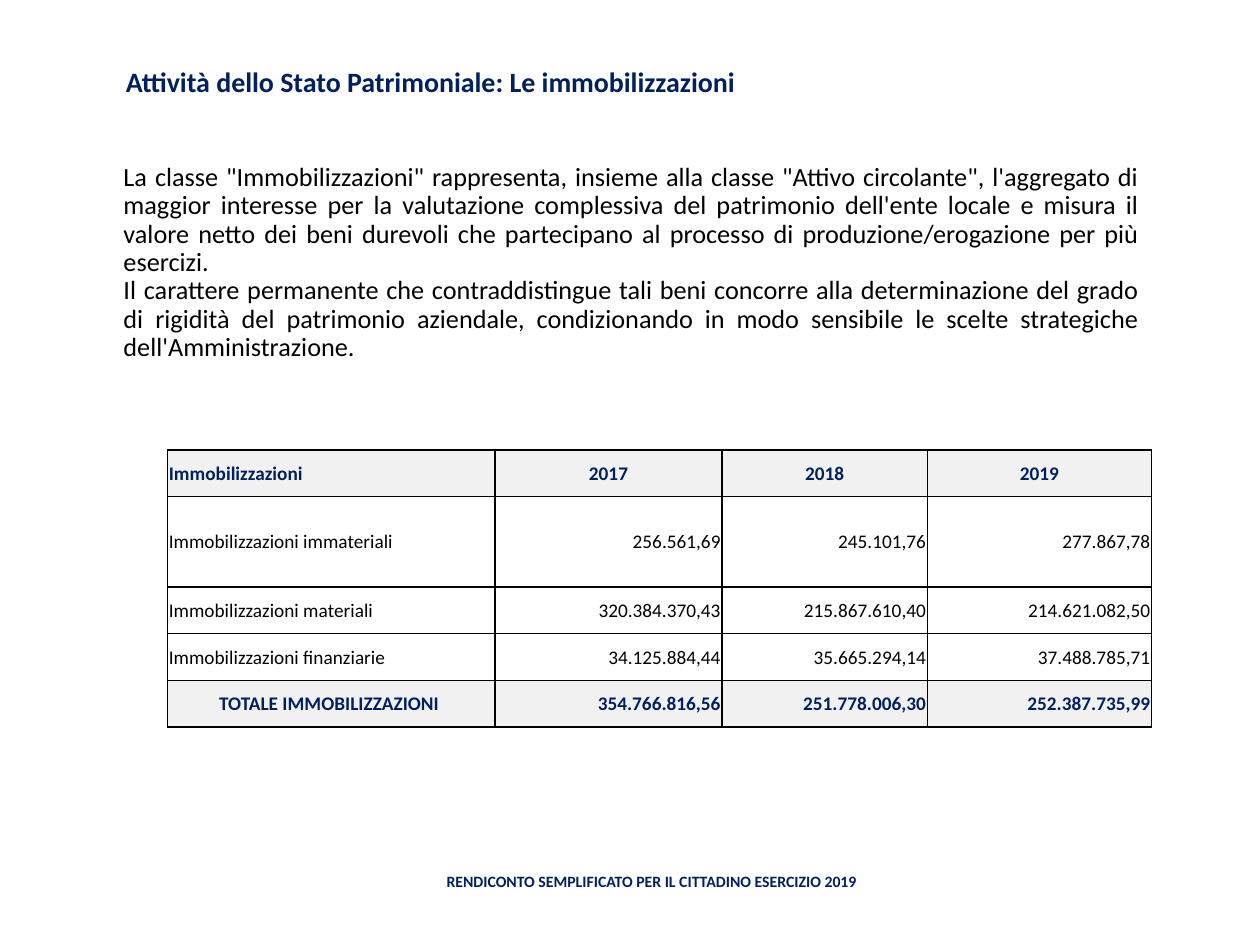
from lxml import etree
from pptx import Presentation
from pptx.dml.color import RGBColor
from pptx.enum.text import MSO_ANCHOR, PP_ALIGN
from pptx.oxml.ns import qn
from pptx.util import Inches, Pt

NAVY = RGBColor(0x00, 0x20, 0x60)
BLACK = RGBColor(0x00, 0x00, 0x00)
GREY = RGBColor(0xF1, 0xF1, 0xF1)
LEFT, CENTER, RIGHT = PP_ALIGN.LEFT, PP_ALIGN.CENTER, PP_ALIGN.RIGHT
JUSTIFY = PP_ALIGN.JUSTIFY
MIDDLE, BOTTOM = MSO_ANCHOR.MIDDLE, MSO_ANCHOR.BOTTOM


def write(paragraph, text, size, color, bold, align):
    paragraph.alignment = align
    run = paragraph.add_run()
    run.text = text
    run.font.name = "Calibri"
    run.font.size = Pt(size)
    run.font.bold = bold
    run.font.color.rgb = color


def add_border(cell):
    properties = cell._tc.get_or_add_tcPr()
    for position, side in enumerate(("a:lnL", "a:lnR", "a:lnT", "a:lnB")):
        line = etree.Element(qn(side), w=str(Pt(1)))
        fill = etree.SubElement(line, qn("a:solidFill"))
        etree.SubElement(fill, qn("a:srgbClr"), val=str(BLACK))
        properties.insert(position, line)


prs = Presentation()
prs.slide_width, prs.slide_height = Inches(10), Inches(7.5)
slide = prs.slides.add_slide(prs.slide_layouts[6])

# Title
title = slide.shapes.add_textbox(Inches(0.9), Inches(0.31), Inches(8.25), Inches(0.52)).text_frame
title.word_wrap = True
title.vertical_anchor = BOTTOM
title.paragraphs[0].line_spacing = 0.85
write(title.paragraphs[0], "Attività dello Stato Patrimoniale: Le immobilizzazioni", 16, NAVY, True, LEFT)

# Explanatory text
explanation = slide.shapes.add_textbox(Inches(0.9), Inches(1.25), Inches(8.25), Inches(1.92)).text_frame
explanation.word_wrap = True
explanation.margin_left, explanation.margin_right = Inches(0.08), Inches(0.11)
sentences = [
    "La classe \"Immobilizzazioni\" rappresenta, insieme alla classe \"Attivo circolante\", "
    "l'aggregato di maggior interesse per la valutazione complessiva del patrimonio dell'ente "
    "locale e misura il valore netto dei beni durevoli che partecipano al processo di "
    "produzione/erogazione per più esercizi.",
    "Il carattere permanente che contraddistingue tali beni concorre alla determinazione del "
    "grado di rigidità del patrimonio aziendale, condizionando in modo sensibile le scelte "
    "strategiche dell'Amministrazione.",
]
for index, sentence in enumerate(sentences):
    paragraph = explanation.add_paragraph() if index else explanation.paragraphs[0]
    paragraph.line_spacing = 0.9
    write(paragraph, sentence, 15, BLACK, False, JUSTIFY)

# Fixed assets by year
rows = [
    ("Immobilizzazioni", "2017", "2018", "2019"),
    ("Immobilizzazioni immateriali", "256.561,69", "245.101,76", "277.867,78"),
    ("Immobilizzazioni materiali", "320.384.370,43", "215.867.610,40", "214.621.082,50"),
    ("Immobilizzazioni finanziarie", "34.125.884,44", "35.665.294,14", "37.488.785,71"),
    ("TOTALE IMMOBILIZZAZIONI ", "354.766.816,56", "251.778.006,30", "252.387.735,99"),
]
column_widths = [2.6, 1.8, 1.63, 1.78]
row_heights = [0.37, 0.72, 0.37, 0.37, 0.37]
assets = slide.shapes.add_table(
    len(rows), len(column_widths), Inches(1.33), Inches(3.57),
    Inches(sum(column_widths)), Inches(sum(row_heights))).table
for column, width in zip(assets.columns, column_widths):
    column.width = Inches(width)
last = len(rows) - 1
for r, values in enumerate(rows):
    assets.rows[r].height = Inches(row_heights[r])
    emphasized = r in (0, last)
    for c, value in enumerate(values):
        cell = assets.cell(r, c)
        cell.vertical_anchor = MIDDLE
        cell.margin_left = cell.margin_right = cell.margin_top = Inches(0.01)
        cell.margin_bottom = 0
        if emphasized:
            cell.fill.solid()
            cell.fill.fore_color.rgb = GREY
        else:
            cell.fill.background()
        add_border(cell)
        if c == 0:
            align = CENTER if r == last else LEFT
        else:
            align = CENTER if r == 0 else RIGHT
        write(cell.text_frame.paragraphs[0], value, 11,
              NAVY if emphasized else BLACK, emphasized, align)

# Footer
footer = slide.shapes.add_textbox(Inches(3.19), Inches(6.75), Inches(3.96), Inches(0.48)).text_frame
footer.word_wrap = True
footer.vertical_anchor = MIDDLE
write(footer.paragraphs[0], "RENDICONTO SEMPLIFICATO PER IL CITTADINO ESERCIZIO 2019", 9, NAVY, True, CENTER)

prs.save("out.pptx")
